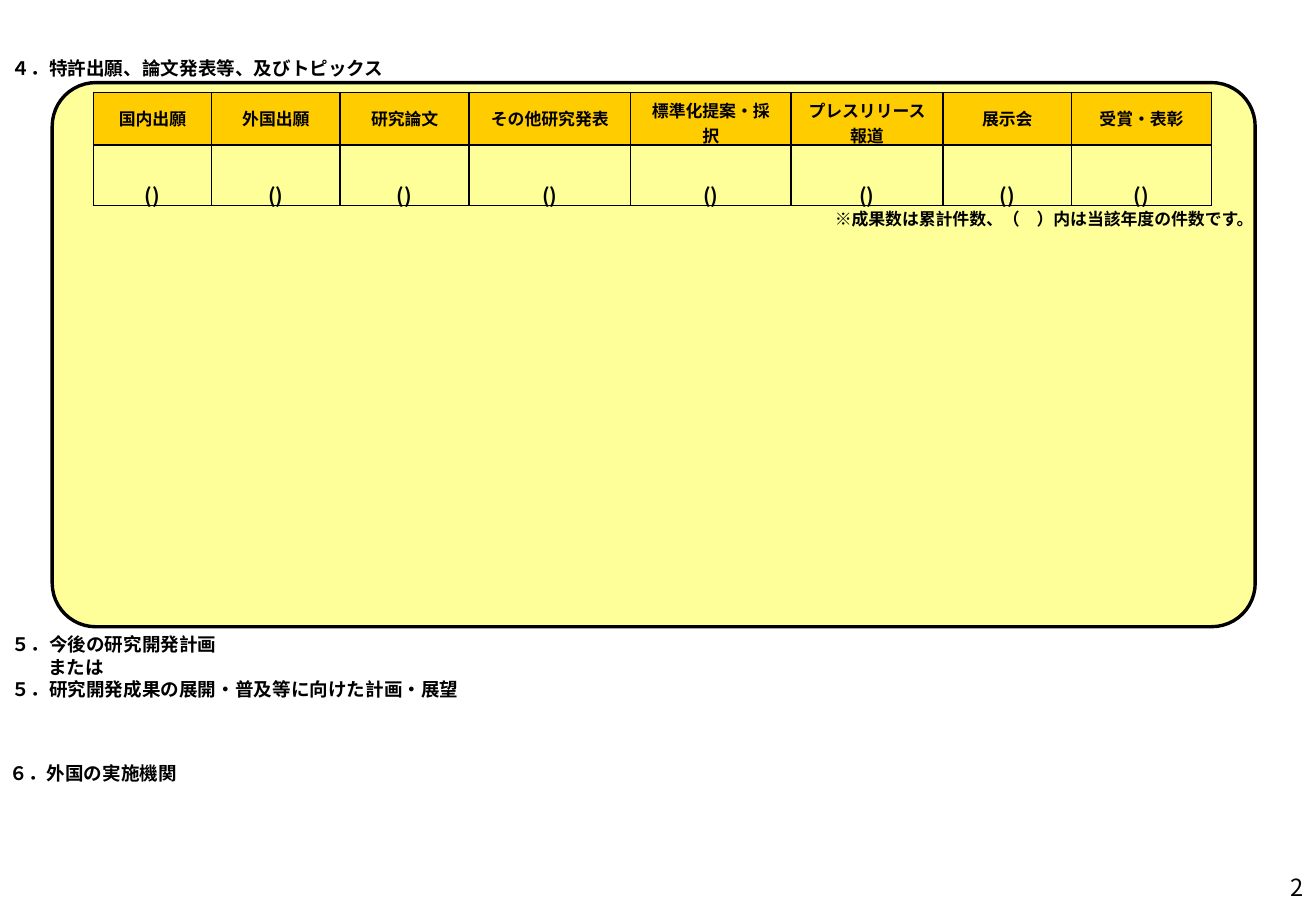
import pptx
import pptx.dml.color
import pptx.enum.shapes
import pptx.enum.text
import pptx.oxml
import pptx.oxml.ns
import pptx.util

PX = 9144  # EMU, 100 px to the inch
JAPANESE = "Noto Sans CJK JP"
LATIN = "Calibri"
ARIAL = "Arial"
BLACK, PALE_YELLOW, AMBER = "000000", "FFFF99", "FFCC00"
ALIGN = pptx.enum.text.PP_ALIGN
ANCHOR = pptx.enum.text.MSO_ANCHOR

HEADERS = [["国内出願"], ["外国出願"], ["研究論文"], ["その他研究発表"],
           ["標準化提案・採択"], ["プレスリリース", "報道"], ["展示会"], ["受賞・表彰"]]
COLUMN_WIDTHS = [97, 106, 106, 133, 132, 125, 106, 115]
ROW_HEIGHTS = [43, 50]
NARROW_PADDING = {0, 1, 3}


def px(length):
    return pptx.util.Emu(length * PX)


def color(value):
    return pptx.dml.color.RGBColor.from_string(value)


class SlideBuilder:
    def __init__(self, slide):
        self.slide = slide

    def panel(self, left, top, width, height):
        shape = self.slide.shapes.add_shape(
            pptx.enum.shapes.MSO_SHAPE.ROUNDED_RECTANGLE,
            px(left), px(top), px(width), px(height))
        shape.adjustments[0] = 0.08
        shape.shadow.inherit = False
        shape.fill.solid()
        shape.fill.fore_color.rgb = color(PALE_YELLOW)
        shape.line.color.rgb = color(BLACK)
        shape.line.width = pptx.util.Pt(2)

    def add_lines(self, frame, lines, size, bold=True, align=ALIGN.LEFT, spacing=None):
        """Fill a text frame; each line is a list of (text, font) runs."""
        for number, runs in enumerate(lines):
            paragraph = frame.paragraphs[0] if number == 0 else frame.add_paragraph()
            paragraph.alignment = align
            if spacing:
                paragraph.line_spacing = pptx.util.Pt(spacing)
            for text, font in runs:
                run = paragraph.add_run()
                run.text = text
                run.font.name = font
                run.font.size = pptx.util.Pt(size)
                run.font.bold = bold
                run.font.color.rgb = color(BLACK)
                east_asian = pptx.oxml.parse_xml(
                    f'<a:ea {pptx.oxml.ns.nsdecls("a")} typeface="{JAPANESE}"/>')
                run.font._element.find(pptx.oxml.ns.qn("a:latin")).addnext(east_asian)

    def text(self, left, top, width, height, lines, size=11, **style):
        box = self.slide.shapes.add_textbox(px(left), px(top), px(width), px(height))
        frame = box.text_frame
        frame.word_wrap = True
        self.add_lines(frame, lines, size, **style)
        return frame

    def border(self, cell):
        properties = cell._tc.get_or_add_tcPr()
        for position, side in enumerate(("lnL", "lnR", "lnT", "lnB")):
            properties.insert(position, pptx.oxml.parse_xml(
                f'<a:{side} {pptx.oxml.ns.nsdecls("a")} w="12700"><a:solidFill>'
                f'<a:srgbClr val="{BLACK}"/></a:solidFill></a:{side}>'))

    def results_table(self, left, top):
        table = self.slide.shapes.add_table(
            len(ROW_HEIGHTS), len(HEADERS), px(left), px(top),
            px(sum(COLUMN_WIDTHS)), px(sum(ROW_HEIGHTS))).table
        table.horz_banding = False
        for row, height in zip(table.rows, ROW_HEIGHTS):
            row.height = px(height)
        for index, (header, width) in enumerate(zip(HEADERS, COLUMN_WIDTHS)):
            table.columns[index].width = px(width)
            title, count = table.cell(0, index), table.cell(1, index)
            title.fill.solid()
            title.fill.fore_color.rgb = color(AMBER)
            title.vertical_anchor = ANCHOR.MIDDLE
            title.margin_left = title.margin_right = px(0 if index in NARROW_PADDING else 11)
            self.add_lines(title.text_frame, [[(line, JAPANESE)] for line in header],
                           10, align=ALIGN.CENTER)
            count.fill.background()
            count.vertical_anchor = ANCHOR.TOP
            count.margin_top, count.margin_bottom = px(29), px(0)
            self.add_lines(count.text_frame, [[("()", JAPANESE)]], 12, align=ALIGN.CENTER)
            self.border(title)
            self.border(count)


def main():
    presentation = pptx.Presentation()
    presentation.slide_width, presentation.slide_height = px(1083), px(750)
    builder = SlideBuilder(presentation.slides.add_slide(presentation.slide_layouts[6]))

    builder.panel(43, 68, 990, 448)
    builder.text(0, 42, 939, 29, [
        [("４", JAPANESE), ("．特許出願、論文発表等、及びトピックス", LATIN)]], spacing=13.4)
    builder.text(1044, 714, 39, 36, [[("2", JAPANESE)]], 14, bold=False, align=ALIGN.RIGHT)
    builder.results_table(77, 76)

    note = builder.text(683, 167, 354, 27, [
        [("※成果数は", LATIN), ("累計件数、（　）内は当該年度の件数です。", ARIAL)]],
        10, spacing=12.2)
    note.margin_left, note.margin_right = px(4), px(0)

    plans = builder.text(0, 516, 1062, 66, [
        [("５", JAPANESE), ("．", ARIAL), ("今後の研究開発計画", LATIN)],
        [("または", LATIN)],
        [("５", JAPANESE), ("．", ARIAL),
         ("研究開発成果の展開・普及等に向けた計画・展望", JAPANESE)]], spacing=13.4)
    plans.paragraphs[1]._p.get_or_add_pPr().set("marL", str(px(30)))

    builder.text(-2, 622, 939, 29, [[("６．外国の実施機関", LATIN)]], spacing=13.4)
    presentation.save("out.pptx")


if __name__ == "__main__":
    main()
